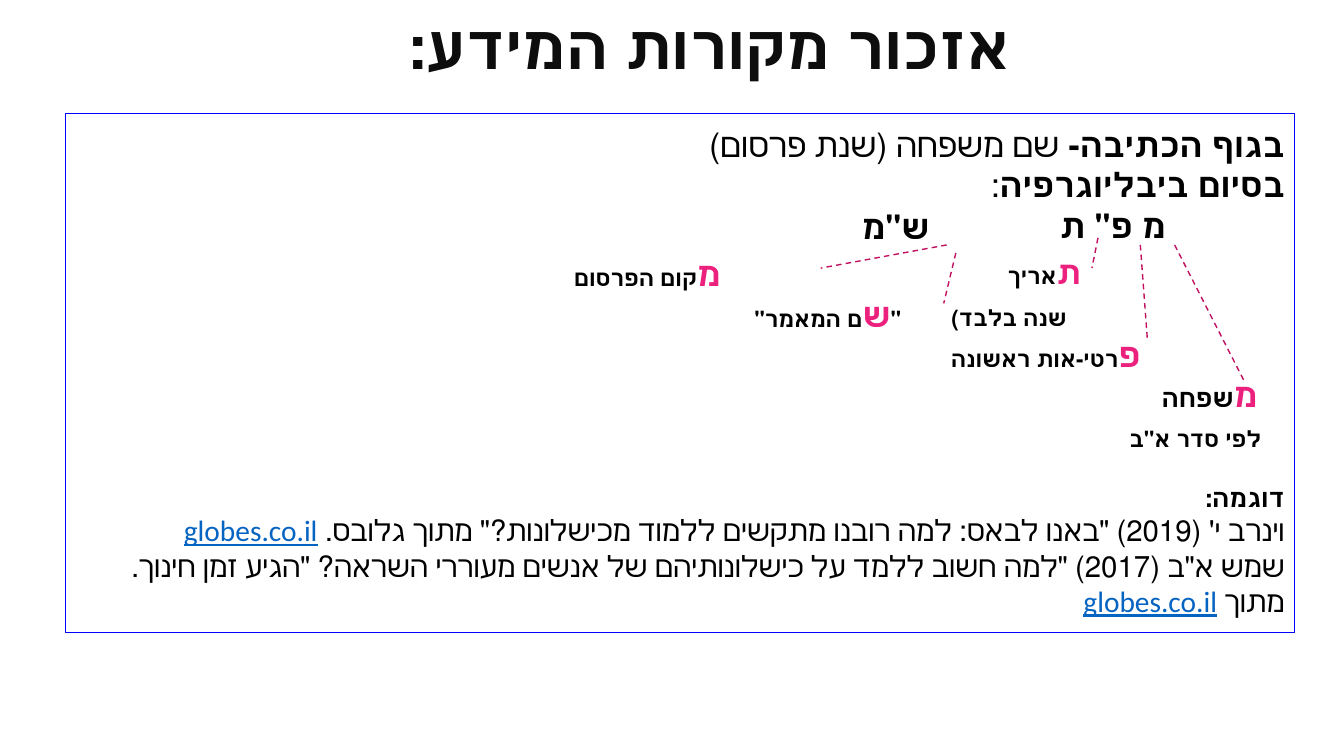
from dataclasses import dataclass

from lxml.etree import SubElement
from pptx import Presentation
from pptx.dml.color import RGBColor
from pptx.enum.dml import MSO_LINE
from pptx.enum.shapes import MSO_CONNECTOR, MSO_SHAPE
from pptx.enum.text import MSO_ANCHOR, MSO_AUTO_SIZE, PP_ALIGN
from pptx.oxml.ns import qn
from pptx.util import Inches, Pt

BLACK = "000000"
PINK = "EC217D"
LINK = "0563C1"
FONT = "Calibri"
LABEL_WIDTH = 2.6
LABEL_HEIGHT = 0.41


@dataclass(frozen=True)
class Piece:
    text: str
    size: float
    bold: bool = True
    color: str = BLACK
    underline: bool = False


@dataclass(frozen=True)
class Line:
    pieces: tuple[Piece, ...]
    indent: float = 0
    space_before: float = 0


@dataclass(frozen=True)
class Label:
    right: float
    top: float
    line: Line


@dataclass(frozen=True)
class Pointer:
    x1: float
    y1: float
    x2: float
    y2: float


def rgb(value: str) -> RGBColor:
    return RGBColor.from_string(value)


def initial(letter: str, size: float = 24) -> Piece:
    return Piece(letter, size, color=PINK)


def citation(text: str) -> Line:
    return Line((Piece(text, 21, bold=False),
                 Piece("globes.co.il", 21, bold=False, color=LINK, underline=True)))


GUIDE = (
    Line((Piece("בגוף הכתיבה- ", 24), Piece("שם משפחה (שנת פרסום)", 24, bold=False))),
    Line((Piece("בסיום ביבליוגרפיה", 24), Piece(":", 24, bold=False))),
    Line((Piece("מ פ\" ת", 24),), indent=1.18),
    Line((initial("ת", 23), Piece("אריך", 16)), indent=2.02, space_before=5.5),
    Line((Piece("שנה בלבד)", 16),), indent=2.16, space_before=9),
    Line((initial("פ"), Piece("רטי-אות ראשונה", 16)), indent=1.43, space_before=2),
    Line((initial("מ"), Piece("שפחה", 18)), indent=0.27),
    Line((Piece("לפי סדר א\"ב", 16),), indent=0.23, space_before=8),
    Line((Piece("דוגמה:", 18),), space_before=21.5),
    citation("וינרב י' (2019) \"באנו לבאס: למה רובנו מתקשים ללמוד מכישלונות?\" מתוך גלובס. "),
    citation("שמש א\"ב (2017) \"למה חשוב ללמד על כישלונותיהם של אנשים מעוררי השראה? "
             "\"הגיע זמן חינוך. מתוך "),
)

SOURCE_LABELS = (
    Label(9.22, 2.04, Line((Piece("ש\"מ", 24),))),
    Label(7.15, 2.51, Line((initial("מ"), Piece("קום הפרסום", 16)))),
    Label(8.94, 2.92, Line((Piece("\"", 16), initial("ש"), Piece("ם המאמר\"", 16)))),
)

POINTERS = (
    Pointer(11.65, 2.43, 12.35, 3.8),
    Pointer(11.31, 2.43, 11.38, 3.37),
    Pointer(10.89, 2.36, 10.83, 2.66),
    Pointer(9.48, 2.51, 9.36, 3.01),
    Pointer(9.39, 2.43, 8.14, 2.66),
)


def write_line(paragraph, line: Line, alignment: PP_ALIGN) -> None:
    paragraph.alignment = alignment
    properties = paragraph._p.get_or_add_pPr()
    properties.set("rtl", "1")
    if line.indent:
        properties.set("marL", str(Inches(line.indent)))
        properties.set("indent", "0")
    if line.space_before:
        paragraph.space_before = Pt(line.space_before)
    for piece in line.pieces:
        run = paragraph.add_run()
        run.text = piece.text
        run.font.name = FONT
        run.font.size = Pt(piece.size)
        run.font.bold = piece.bold
        run.font.underline = piece.underline
        run.font.color.rgb = rgb(piece.color)


def draw_guide(slide) -> None:
    guide = slide.shapes.add_shape(MSO_SHAPE.RECTANGLE, Inches(0.65), Inches(1.13),
                                   Inches(12.19), Inches(5.15))
    guide.shadow.inherit = False
    guide.fill.background()
    guide.line.color.rgb = rgb("0000FF")
    guide.line.width = Pt(0.75)
    frame = guide.text_frame
    frame.word_wrap = True
    frame.vertical_anchor = MSO_ANCHOR.TOP
    frame.auto_size = MSO_AUTO_SIZE.NONE
    frame.margin_left = frame.margin_right = Inches(0.1)
    frame.margin_top = frame.margin_bottom = Inches(0.1)
    for index, line in enumerate(GUIDE):
        paragraph = frame.add_paragraph() if index else frame.paragraphs[0]
        write_line(paragraph, line, PP_ALIGN.RIGHT)


def draw_label(slide, label: Label) -> None:
    box = slide.shapes.add_textbox(Inches(label.right - LABEL_WIDTH), Inches(label.top),
                                   Inches(LABEL_WIDTH), Inches(LABEL_HEIGHT))
    frame = box.text_frame
    frame.word_wrap = True
    frame.margin_left = frame.margin_right = 0
    frame.margin_top = frame.margin_bottom = 0
    write_line(frame.paragraphs[0], label.line, PP_ALIGN.RIGHT)


def draw_pointer(slide, pointer: Pointer) -> None:
    dash = slide.shapes.add_connector(MSO_CONNECTOR.STRAIGHT,
                                      Inches(pointer.x1), Inches(pointer.y1),
                                      Inches(pointer.x2), Inches(pointer.y2))
    dash.line.color.rgb = rgb("C21060")
    dash.line.width = Pt(1)
    dash.line.dash_style = MSO_LINE.DASH
    SubElement(dash._element.spPr, qn("a:effectLst"))


def draw_title(slide) -> None:
    title = slide.shapes.add_textbox(Inches(1.26), Inches(0.11), Inches(11.58), Inches(0.77))
    frame = title.text_frame
    frame.word_wrap = True
    frame.vertical_anchor = MSO_ANCHOR.MIDDLE
    heading = Line((Piece("אזכור מקורות המידע:", 44, color="0D0D0D"),))
    write_line(frame.paragraphs[0], heading, PP_ALIGN.CENTER)
    frame.paragraphs[0].line_spacing = 0.9


def main() -> None:
    presentation = Presentation()
    presentation.slide_width = Inches(13.33)
    presentation.slide_height = Inches(7.5)
    slide = presentation.slides.add_slide(presentation.slide_layouts[6])
    draw_guide(slide)
    for label in SOURCE_LABELS:
        draw_label(slide, label)
    for pointer in POINTERS:
        draw_pointer(slide, pointer)
    draw_title(slide)
    presentation.save("out.pptx")


if __name__ == "__main__":
    main()
